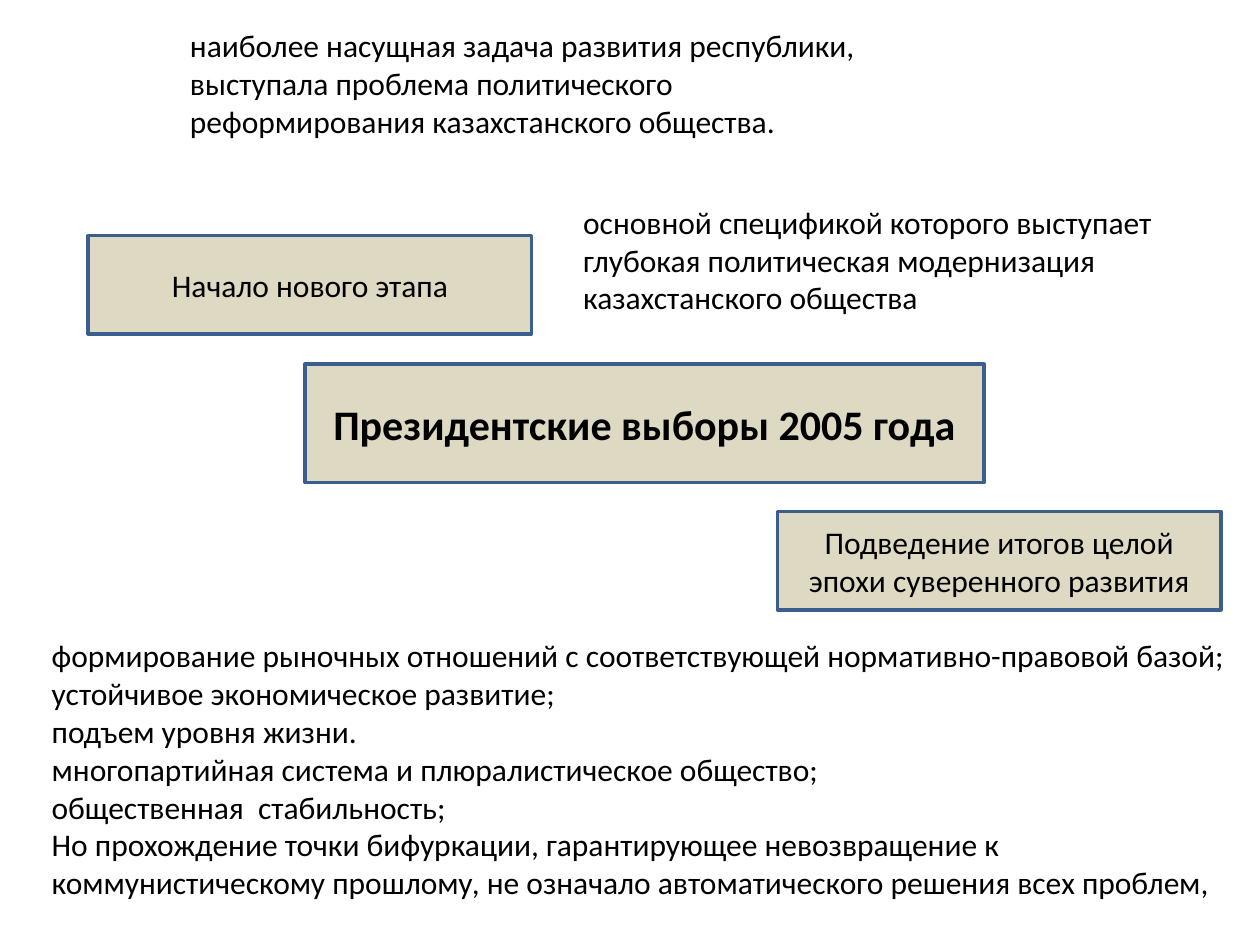
from lxml import etree
from pptx import Presentation
from pptx.dml.color import RGBColor
from pptx.enum.shapes import MSO_SHAPE
from pptx.enum.text import MSO_ANCHOR, MSO_AUTO_SIZE, PP_ALIGN
from pptx.oxml.ns import qn
from pptx.util import Inches, Pt

RECT = MSO_SHAPE.RECTANGLE
MIDDLE, TOP = MSO_ANCHOR.MIDDLE, MSO_ANCHOR.TOP
CENTER, LEFT = PP_ALIGN.CENTER, PP_ALIGN.LEFT
NO_FIT, GROW = MSO_AUTO_SIZE.NONE, MSO_AUTO_SIZE.SHAPE_TO_FIT_TEXT

COLORS = {"fill": "DDD9C3", "line": "3A5F8C", "text": "000000"}
BOX_FRAME = {"word_wrap": True, "vertical_anchor": MIDDLE, "auto_size": NO_FIT}
NOTE_FRAME = {"word_wrap": True, "vertical_anchor": TOP, "auto_size": GROW}
SPACING = {"space_before": Pt(0), "space_after": Pt(0), "line_spacing": 1.0}

HEADING = "Президентские выборы 2005 года"
STAGES = [
    ("Подведение итогов целой эпохи суверенного развития", (6.17, 4.06, 3.52, 0.78)),
    ("Начало нового этапа", (0.7, 1.87, 3.52, 0.78)),
]
NOTES = [
    ("основной спецификой которого выступает глубокая политическая модернизация "
     "казахстанского общества", (4.53, 1.56, 5, 1.01)),
    ("наиболее насущная задача развития республики, выступала проблема политического "
     "реформирования казахстанского общества.", (1.41, 0.16, 5.63, 1.01)),
]
RESULTS = [
    "формирование рыночных отношений с соответствующей нормативно-правовой базой;",
    "устойчивое экономическое развитие;",
    "подъем уровня жизни.",
    "многопартийная система и плюралистическое общество;",
    "общественная  стабильность;",
    "Но прохождение точки бифуркации, гарантирующее невозвращение к "
    "коммунистическому прошлому, не означало автоматического решения всех проблем,",
]


def rgb(name):
    """Return the named palette colour."""
    return RGBColor.from_string(COLORS[name])


def apply(target, values):
    """Set each attribute in values on target."""
    for name, value in values.items():
        setattr(target, name, value)


def place(sp, box):
    """Move and size a shape to a box given in inches."""
    apply(sp, dict(zip(("left", "top", "width", "height"), map(Inches, box))))


def write(sp, lines, frame, align=LEFT, size=18, bold=False):
    """Write one formatted paragraph for each line."""
    tf = sp.text_frame
    apply(tf, frame)
    for i, line in enumerate(lines):
        p = tf.paragraphs[0] if i == 0 else tf.add_paragraph()
        apply(p, {"alignment": align, **SPACING})
        r = p.add_run()
        r.text = line
        apply(r.font, {"name": "Calibri", "size": Pt(size), "bold": bold})
        r.font.color.rgb = rgb("text")


def paint(sp):
    """Give a box its fill and outline."""
    sp.fill.solid()
    sp.fill.fore_color.rgb = rgb("fill")
    sp.line.color.rgb = rgb("line")
    sp.line.width = Pt(2)


def add_heading(s, box):
    """Place the central heading in the title placeholder."""
    sp = s.shapes.title
    place(sp, box)
    paint(sp)
    write(sp, [HEADING], BOX_FRAME, CENTER, 24, True)


def add_stage(s, text, box):
    """Add a filled box for one stage."""
    sp = s.shapes.add_shape(RECT, *map(Inches, box))
    sp.shadow.inherit = False
    paint(sp)
    write(sp, [text], BOX_FRAME, CENTER)


def add_note(s, text, box):
    """Add a plain explanatory text."""
    write(s.shapes.add_textbox(*map(Inches, box)), [text], NOTE_FRAME)


def add_results(s, box):
    """Place the results in the body placeholder without bullets."""
    sp = s.placeholders[1]
    place(sp, box)
    write(sp, RESULTS, NOTE_FRAME)
    for p in sp.text_frame.paragraphs:
        pPr = p._p.get_or_add_pPr()
        pPr.set("marL", "0")
        pPr.set("indent", "0")
        etree.SubElement(pPr, qn("a:buNone"))


def main():
    """Build and save the slide."""
    prs = Presentation()
    prs.slide_width, prs.slide_height = Inches(10), Inches(7.5)
    s = prs.slides.add_slide(prs.slide_layouts[1])
    add_heading(s, (2.42, 2.89, 5.39, 0.94))
    for text, box in STAGES:
        add_stage(s, text, box)
    for text, box in NOTES:
        add_note(s, text, box)
    add_results(s, (0.31, 5, 9.53, 2.22))
    prs.save("out.pptx")


if __name__ == "__main__":
    main()
